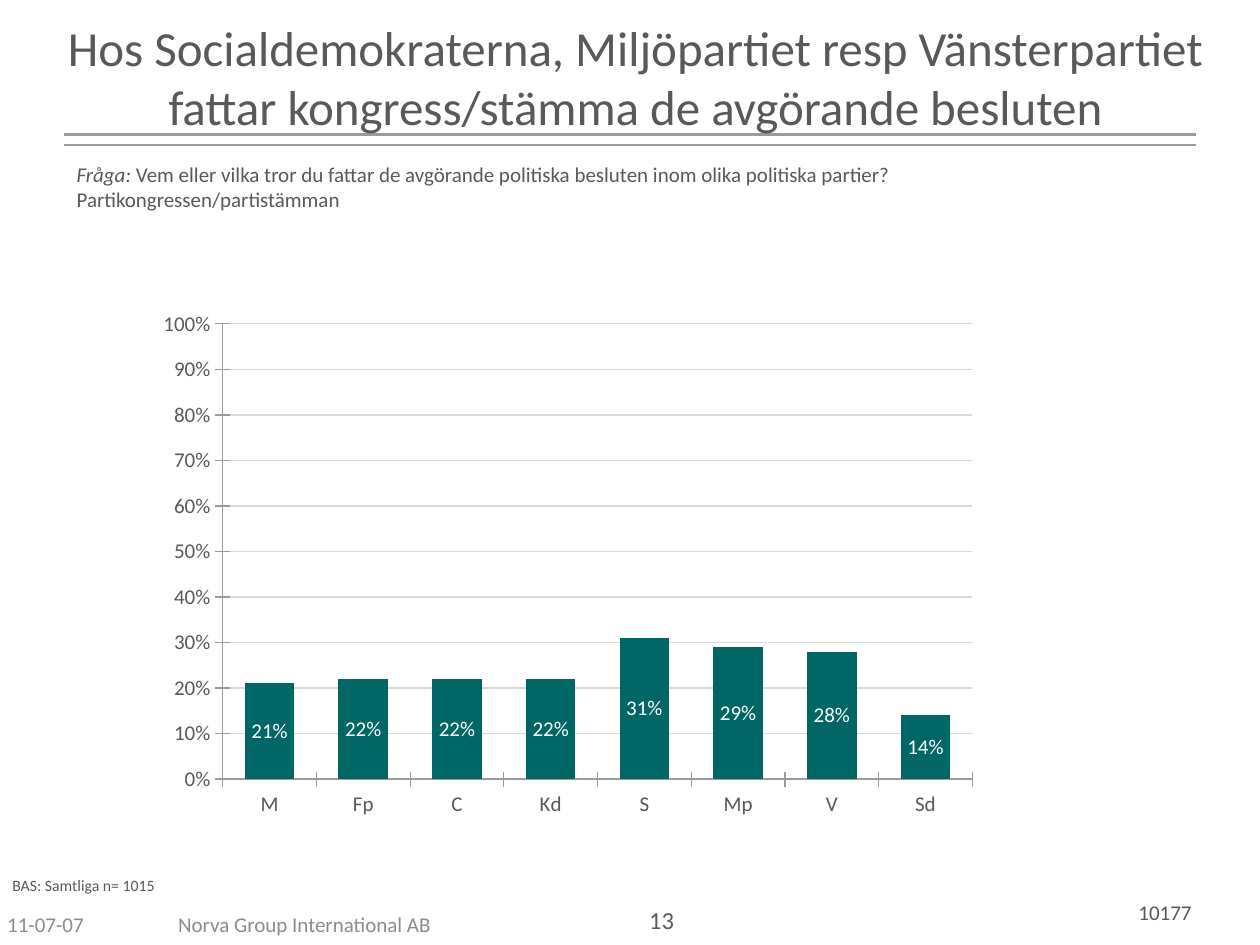
"""Builds the survey slide on who takes the decisive political decisions in each party."""
from dataclasses import dataclass

from lxml.etree import SubElement
from pptx import Presentation
from pptx.chart.data import CategoryChartData
from pptx.dml.color import RGBColor
from pptx.enum.chart import XL_CHART_TYPE as ChartType, XL_TICK_MARK as Tick
from pptx.enum.shapes import MSO_CONNECTOR as Connector
from pptx.enum.text import MSO_ANCHOR as Anchor, PP_ALIGN as Align
from pptx.oxml import parse_xml
from pptx.oxml.ns import nsdecls, qn
from pptx.slide import Slide
from pptx.util import Pt


@dataclass(frozen=True)
class Theme:
    font: str = "Calibri"
    ink: RGBColor = RGBColor(0x59, 0x59, 0x59)
    muted: RGBColor = RGBColor(0x8C, 0x8C, 0x8C)
    rule: RGBColor = RGBColor(0x9B, 0x9B, 0x9B)
    grid: RGBColor = RGBColor(0xD9, 0xD9, 0xD9)
    bar: RGBColor = RGBColor(0x00, 0x66, 0x66)
    bar_label: RGBColor = RGBColor(0xFF, 0xFF, 0xFF)
    title: float = 28
    chart: float = 18
    page: float = 14
    body: float = 12
    base: float = 9


THEME = Theme()


@dataclass(frozen=True)
class Label:
    lines: tuple[str, ...]
    left: float
    top: float
    width: float
    height: float
    size: float = THEME.body
    color: RGBColor = THEME.ink
    align: Align = Align.LEFT
    anchor: Anchor = Anchor.TOP
    lead: str = ""


LABELS = (
    Label(("10177",), 501, 510.5, 187, 21.6, align=Align.RIGHT),
    Label(("11-07-07",), -3, 513.5, 168, 28.8, color=THEME.muted, anchor=Anchor.MIDDLE),
    Label(("Norva Group International AB",), 60, 513.5, 228, 28.8,
          color=THEME.muted, align=Align.CENTER, anchor=Anchor.MIDDLE),
    Label(("13",), 294, 513.5, 168, 28.8, THEME.page, align=Align.CENTER),
    Label(("Hos Socialdemokraterna, Miljöpartiet resp Vänsterpartiet "
           "fattar kongress/stämma de avgörande besluten",),
          20, 6.5, 686, 62.6, THEME.title, align=Align.CENTER),
    Label(("Vem eller vilka tror du fattar de avgörande politiska besluten "
           "inom olika politiska partier?", "Partikongressen/partistämman"),
          36.7, 88.5, 646.6, 36, lead="Fråga: "),
    Label(("BAS: Samtliga n= 1015",), 0, 497, 244, 18, THEME.base),
)
RULE_TOPS = (77, 82.8)
SHARES = {"M": 0.21, "Fp": 0.22, "C": 0.22, "Kd": 0.22,
          "S": 0.31, "Mp": 0.29, "V": 0.28, "Sd": 0.14}
PLOT = {"x": 0.071, "y": 0.143, "w": 0.774, "h": 0.729}


def style_font(font, size: float, color: RGBColor) -> None:
    """Apply the theme typeface with a size and colour."""
    font.name = THEME.font
    font.size = Pt(size)
    font.color.rgb = color


def draw_label(slide: Slide, label: Label) -> None:
    """Add one text box, with an optional italic lead-in."""
    frame = slide.shapes.add_textbox(
        Pt(label.left), Pt(label.top), Pt(label.width), Pt(label.height)).text_frame
    frame.word_wrap = True
    frame.vertical_anchor = label.anchor
    for index, line in enumerate(label.lines):
        paragraph = frame.add_paragraph() if index else frame.paragraphs[0]
        paragraph.alignment = label.align
        style_font(paragraph.font, label.size, label.color)
        if label.lead and not index:
            lead = paragraph.add_run()
            lead.text = label.lead
            lead.font.italic = True
        paragraph.add_run().text = line


def draw_rule(slide: Slide, top: float) -> None:
    """Add one horizontal rule below the title."""
    rule = slide.shapes.add_connector(
        Connector.STRAIGHT, Pt(36.7), Pt(top), Pt(683.3), Pt(top))
    rule.line.color.rgb = THEME.rule
    rule.line.width = Pt(1.5)
    SubElement(rule._element.spPr, qn("a:effectLst"))


def draw_share_chart(slide: Slide) -> None:
    """Add the column chart of shares by party."""
    data = CategoryChartData(number_format="0%")
    data.categories = list(SHARES)
    data.add_series("Series 1", list(SHARES.values()))
    chart = slide.shapes.add_chart(
        ChartType.COLUMN_STACKED, Pt(88), Pt(134), Pt(553.5), Pt(357), data).chart
    chart.has_legend = chart.has_title = False
    style_font(chart.font, THEME.chart, THEME.ink)

    for axis in (chart.category_axis, chart.value_axis):
        axis.major_tick_mark = Tick.CROSS
        axis.format.line.color.rgb = THEME.rule
        axis.format.line.width = Pt(0.75)
        style_font(axis.tick_labels.font, THEME.body, THEME.ink)
    shares_axis = chart.value_axis
    shares_axis.minimum_scale, shares_axis.maximum_scale = 0, 1
    shares_axis.major_unit = 0.1
    shares_axis.tick_labels.number_format = "0%"
    shares_axis.tick_labels.number_format_is_linked = False
    shares_axis.has_major_gridlines = True
    shares_axis.major_gridlines.format.line.color.rgb = THEME.grid
    shares_axis.major_gridlines.format.line.width = Pt(0.75)

    columns = chart.plots[0]
    columns.gap_width, columns.overlap = 89, 100
    columns.vary_by_categories = False
    shares = columns.series[0]
    shares.format.fill.solid()
    shares.format.fill.fore_color.rgb = THEME.bar
    labels = shares.data_labels
    labels.show_value = True
    labels.number_format = "0%"
    labels.number_format_is_linked = False
    style_font(labels.font, THEME.body, THEME.bar_label)

    modes = "".join(f'<c:{side}Mode val="edge"/>' for side in "xy")
    extents = "".join(f'<c:{side} val="{value}"/>' for side, value in PLOT.items())
    layout = parse_xml(
        f'<c:layout {nsdecls("c")}><c:manualLayout><c:layoutTarget val="inner"/>'
        f"{modes}{extents}</c:manualLayout></c:layout>")
    plot_area = chart._chartSpace.chart.plotArea
    for automatic in plot_area.findall(qn("c:layout")):
        plot_area.remove(automatic)
    plot_area.insert(0, layout)


def main() -> None:
    """Build and save the slide."""
    deck = Presentation()
    deck.slide_width, deck.slide_height = Pt(720), Pt(540)
    slide = deck.slides.add_slide(deck.slide_layouts[6])
    for top in RULE_TOPS:
        draw_rule(slide, top)
    draw_share_chart(slide)
    for label in LABELS:
        draw_label(slide, label)
    deck.save("out.pptx")


if __name__ == "__main__":
    main()
